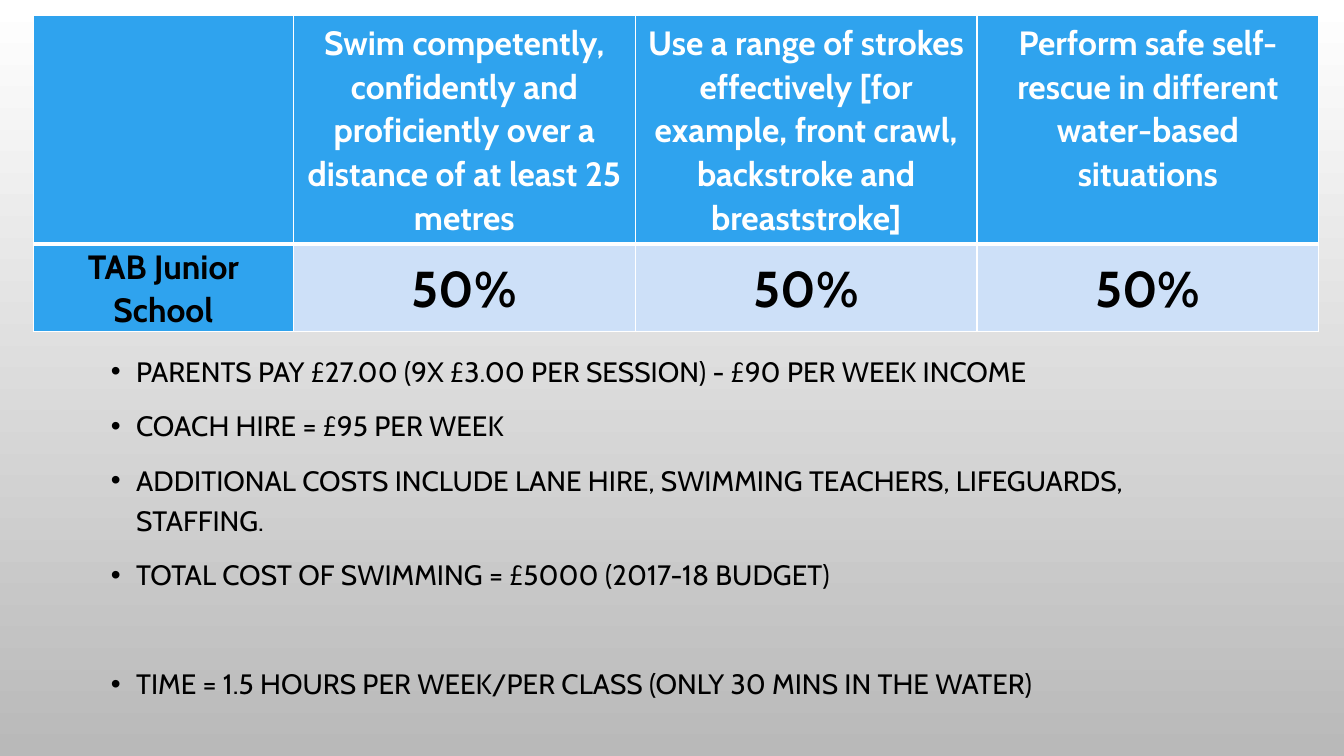
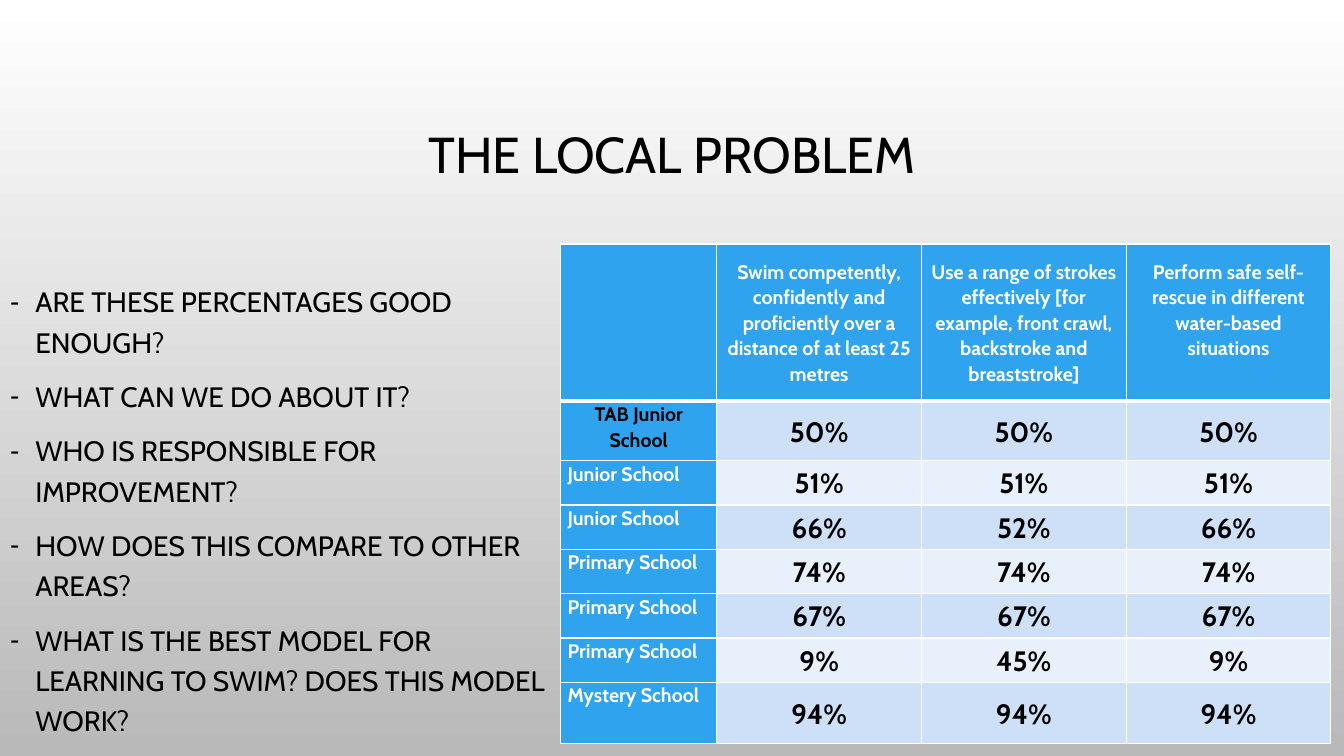
from pptx import Presentation
from pptx.dml.color import RGBColor
from pptx.enum.text import MSO_ANCHOR as Anchor, MSO_AUTO_SIZE as AutoSize, PP_ALIGN as Align
from pptx.oxml.ns import qn
from pptx.util import Inches, Pt
from lxml.etree import SubElement

FONT = "Cabin"
WHITE, BLACK, GREY = "FFFFFF", "000000", "B9B9B9"
BLUE, BANDS = "2FA3EE", ("CDE0F8", "E8F0FC")
LINE_HEIGHT = 1.3

SKILLS = [
    "",
    "Swim competently, confidently and proficiently over a distance of at least 25 metres",
    "Use a range of strokes effectively [for example, front crawl, backstroke and breaststroke]",
    "Perform safe self-rescue in different water-based situations",
]
HOME_SCHOOL = ("TAB Junior School", "50%", "50%", "50%")
OTHER_SCHOOLS = [
    ("Junior School", "51%", "51%", "51%"),
    ("Junior School", "66%", "52%", "66%"),
    ("Primary School", "74%", "74%", "74%"),
    ("Primary School", "67%", "67%", "67%"),
    ("Primary School", "9%", "45%", "9%"),
    ("Mystery School", "94%", "94%", "94%"),
]
SLIDES = [
    {
        "title": None,
        "body": {
            "place": (1, 3.4, 11.33, 3.93),
            "bullet": "•",
            "gaps": (0, 10, 10, 10, 49),
            "lines": [
                "PARENTS PAY £27.00 (9X £3.00 PER SESSION) - £90 PER WEEK INCOME",
                "COACH HIRE = £95 PER WEEK",
                "ADDITIONAL COSTS INCLUDE LANE HIRE, SWIMMING TEACHERS, LIFEGUARDS, STAFFING.",
                "TOTAL COST OF SWIMMING = £5000 (2017-18 BUDGET)",
                "TIME = 1.5 HOURS PER WEEK/PER CLASS (ONLY 30 MINS IN THE WATER)",
            ],
        },
        "table": {
            "corner": (0.33, 0.15),
            "columns": (2.58, 3.39, 3.39, 3.39),
            "heights": (2.27, 0.86),
            "schools": [HOME_SCHOOL],
            "label_size": 24,
            "value_size": 36,
        },
    },
    {
        "title": "THE LOCAL PROBLEM",
        "body": {
            "place": (0, 2.71, 5.56, 3.74),
            "bullet": "-",
            "gaps": (0, 10, 10, 10, 10),
            "lines": [
                "ARE THESE PERCENTAGES GOOD ENOUGH?",
                "WHAT CAN WE DO ABOUT IT?",
                "WHO IS RESPONSIBLE FOR IMPROVEMENT?",
                "HOW DOES THIS COMPARE TO OTHER AREAS?",
                "WHAT IS THE BEST MODEL FOR LEARNING TO SWIM? DOES THIS MODEL WORK?",
            ],
        },
        "table": {
            "corner": (5.56, 2.42),
            "columns": (1.55, 2.03, 2.03, 2.03),
            "heights": (1.56, 0.59, 0.44, 0.44, 0.44, 0.44, 0.44, 0.61),
            "schools": [HOME_SCHOOL, *OTHER_SCHOOLS],
            "label_size": 14,
            "value_size": 20,
        },
    },
]


def color(value):
    return RGBColor.from_string(value)


def write(para, text, size=20, ink=BLACK, bold=False, align=Align.LEFT, spacing=1.2, before=0):
    para.alignment = align
    para.line_spacing = spacing
    para.space_before = Pt(before)
    span = para.add_run()
    span.text = text
    span.font.name = FONT
    span.font.size = Pt(size)
    span.font.bold = bold
    span.font.color.rgb = color(ink)


def place(box, left, top, width, height):
    box.left, box.top = Inches(left), Inches(top)
    box.width, box.height = Inches(width), Inches(height)


def prepare_frame(box, anchor):
    frame = box.text_frame
    frame.word_wrap = True
    frame.auto_size = AutoSize.NONE
    frame.vertical_anchor = anchor
    return frame


def add_bullet(para, mark):
    props = para._p.get_or_add_pPr()
    props.set("marL", str(Inches(0.25)))
    props.set("indent", str(Inches(-0.25)))
    SubElement(SubElement(props, qn("a:buClr")), qn("a:srgbClr"), val=BLACK)
    SubElement(props, qn("a:buChar"), char=mark)


def fill_title(box, text):
    place(box, 1, 0.68, 11.33, 1.75)
    frame = prepare_frame(box, Anchor.MIDDLE)
    write(frame.paragraphs[0], text, size=36, align=Align.CENTER, spacing=0.9)


def fill_body(box, body):
    place(box, *body["place"])
    frame = prepare_frame(box, Anchor.TOP)
    for number, (text, gap) in enumerate(zip(body["lines"], body["gaps"])):
        para = frame.add_paragraph() if number else frame.paragraphs[0]
        add_bullet(para, body["bullet"])
        write(para, text, before=gap)


def add_borders(cell, top, bottom):
    props = cell._tc.get_or_add_tcPr()
    for side, width in (("L", 1), ("R", 1), ("T", top), ("B", bottom)):
        line = SubElement(props, qn(f"a:ln{side}"), w=str(Pt(width)))
        SubElement(SubElement(line, qn("a:solidFill")), qn("a:srgbClr"), val=WHITE)


def fill_cell(cell, text, row, column, label_size, value_size):
    header, label = row == 0, column == 0
    add_borders(cell, top=3 if row == 1 else 1, bottom=3 if header else 1)
    cell.fill.solid()
    cell.fill.fore_color.rgb = color(BLUE if header or label else BANDS[(row - 1) % 2])
    cell.margin_left = cell.margin_right = Inches(0.07)
    cell.margin_top = cell.margin_bottom = 0
    cell.vertical_anchor = Anchor.TOP if label else Anchor.MIDDLE
    if header and column == len(SKILLS) - 1:
        cell.margin_bottom = Pt(label_size * LINE_HEIGHT)
    if text:
        other_school = label and row > 1
        write(
            cell.text_frame.paragraphs[0],
            text,
            size=label_size if header or label else value_size,
            ink=WHITE if header or other_school else BLACK,
            bold=True,
            align=Align.LEFT if other_school else Align.CENTER,
            spacing=1.07,
        )


def add_results(page, results):
    rows = [SKILLS, *results["schools"]]
    columns, heights = results["columns"], results["heights"]
    area = (*results["corner"], sum(columns), sum(heights))
    table = page.shapes.add_table(len(rows), len(columns), *map(Inches, area)).table
    table.horz_banding = False
    for column, width in zip(table.columns, columns):
        column.width = Inches(width)
    for row, height in zip(table.rows, heights):
        row.height = Inches(height)
    for r, texts in enumerate(rows):
        for c, text in enumerate(texts):
            fill_cell(table.cell(r, c), text, r, c, results["label_size"], results["value_size"])


def set_background(master):
    fill = master.background.fill
    fill.gradient()
    fill.gradient_angle = 270
    for stop, position, shade in zip(fill.gradient_stops, (0, 1), (WHITE, GREY)):
        stop.position = position
        stop.color.rgb = color(shade)


def main():
    deck = Presentation()
    deck.slide_width, deck.slide_height = Inches(13.33), Inches(7.5)
    set_background(deck.slide_master)
    for content in SLIDES:
        page = deck.slides.add_slide(deck.slide_layouts[1])
        title, body = page.placeholders
        if content["title"]:
            fill_title(title, content["title"])
        else:
            title.element.getparent().remove(title.element)
        fill_body(body, content["body"])
        add_results(page, content["table"])
    deck.save("out.pptx")


if __name__ == "__main__":
    main()
